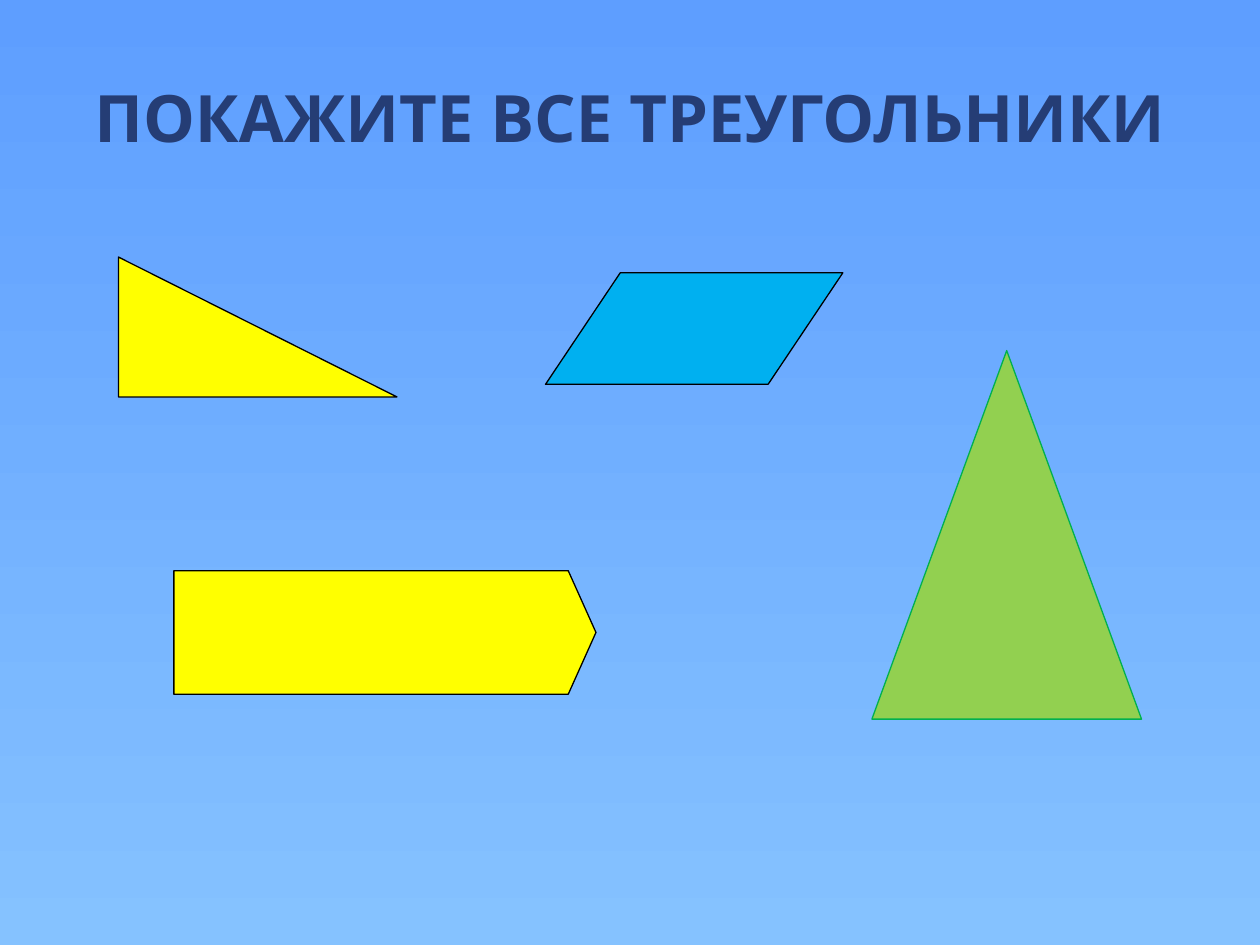
from dataclasses import dataclass
from pptx import Presentation
from pptx.dml.color import RGBColor
from pptx.enum.shapes import MSO_SHAPE
from pptx.enum.text import MSO_ANCHOR, PP_ALIGN
from pptx.util import Inches, Pt

WIDE, HIGH = Inches(10), Inches(7.5)


@dataclass(frozen=True)
class Theme:
    sky: tuple = ("5E9EFF", "85C2FF")
    ink: str = "253D75"
    sun: str = "FFFF00"
    blue: str = "00B0F0"
    lime: str = "92D050"
    edge: str = "000000"
    green: str = "00B050"
    font: str = "Open Sans"
    head: float = 37.3
    line: float = 0


THEME = Theme()


def rgb(code):
    return RGBColor.from_string(code)


def across(share):
    return round(WIDE * share / 100)


def down(share):
    return round(HIGH * share / 100)


def place(left, top, width, height):
    return across(left), down(top), across(width), down(height)


def paint(shape, fill, edge):
    shape.shadow.inherit = False
    shape.fill.solid()
    shape.fill.fore_color.rgb = rgb(fill)
    shape.line.color.rgb = rgb(edge)
    shape.line.width = Pt(THEME.line)


def shade(slide, colors):
    fill = slide.background.fill
    fill.gradient()
    fill.gradient_angle = 270
    for stop, color in zip(fill.gradient_stops, colors):
        stop.color.rgb = rgb(color)


def write(slide, text, box, *, size, color, bold=False, align=PP_ALIGN.CENTER):
    frame = slide.shapes.add_textbox(*place(*box)).text_frame
    frame.word_wrap = True
    frame.vertical_anchor = MSO_ANCHOR.MIDDLE
    line = frame.paragraphs[0]
    line.text = text
    line.alignment = align
    font = line.font
    font.name, font.size, font.bold = THEME.font, Pt(size), bold
    font.color.rgb = rgb(color)


def figure(slide, kind, box, *, fill, edge=THEME.edge, slant=None):
    shape = slide.shapes.add_shape(kind, *place(*box))
    if slant is not None:
        shape.adjustments[0] = slant
    paint(shape, fill, edge)


def outline(slide, points, *, fill, edge=THEME.edge):
    start, *rest = [(across(x), down(y)) for x, y in points]
    path = slide.shapes.build_freeform(*start)
    path.add_line_segments(rest, close=True)
    paint(path.convert_to_shape(), fill, edge)


def arrow(left, top, width, height, tip):
    right, base = left + width, top + height
    neck = right - tip
    return [(left, top), (neck, top), (right, top + height / 2),
            (neck, base), (left, base)]


def main():
    deck = Presentation()
    deck.slide_width, deck.slide_height = WIDE, HIGH
    slide = deck.slides.add_slide(deck.slide_layouts[6])
    shade(slide, THEME.sky)
    write(slide, "ПОКАЖИТЕ ВСЕ ТРЕУГОЛЬНИКИ", (5, 4, 90, 16.67),
          size=THEME.head, color=THEME.ink, bold=True)
    figure(slide, MSO_SHAPE.RIGHT_TRIANGLE, (9.4, 27.2, 22.1, 14.8),
           fill=THEME.sun)
    figure(slide, MSO_SHAPE.PARALLELOGRAM, (43.3, 28.87, 23.6, 11.8),
           fill=THEME.blue, slant=0.67)
    outline(slide, arrow(13.8, 60.4, 33.5, 13.07, 2.2), fill=THEME.sun)
    figure(slide, MSO_SHAPE.ISOSCELES_TRIANGLE, (69.2, 37.1, 21.4, 39),
           fill=THEME.lime, edge=THEME.green)
    deck.save("out.pptx")


if __name__ == "__main__":
    main()
